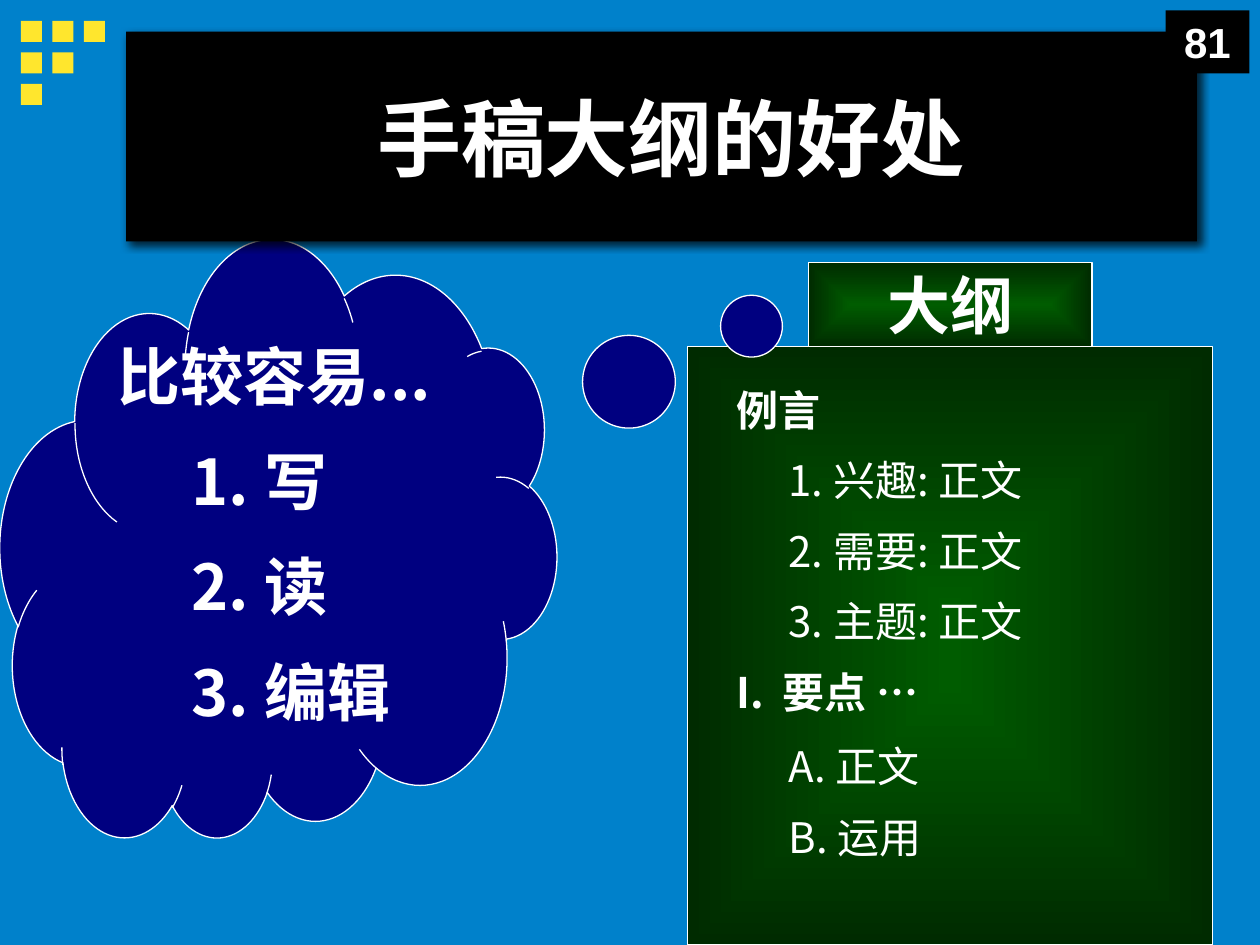
from lxml import etree
from pptx import Presentation
from pptx.dml import color
from pptx.enum import shapes, text
from pptx.oxml import ns
from pptx.util import Pt

BLUE = color.RGBColor(0x00, 0x81, 0xCB)
YELLOW = color.RGBColor(0xFF, 0xE6, 0x2D)
NAVY = color.RGBColor(0x00, 0x00, 0x80)
GREEN = color.RGBColor(0x00, 0x5C, 0x00)
DARK_GREEN = color.RGBColor(0x00, 0x2B, 0x00)
BLACK = color.RGBColor(0x00, 0x00, 0x00)
WHITE = color.RGBColor(0xFF, 0xFF, 0xFF)
CJK = "Noto Sans CJK TC"
CENTER = text.PP_ALIGN.CENTER
LEFT = text.PP_ALIGN.LEFT


def write(para, content, size=24, bold=True, font=CJK, align=CENTER, margin=0, hanging=0, after=0):
    para.alignment = align
    para.space_before = Pt(0)
    para.space_after = Pt(after)
    properties = para._p.get_or_add_pPr()
    properties.set("marL", str(Pt(margin)))
    properties.set("indent", str(-Pt(hanging)))
    etree.SubElement(properties, ns.qn("a:buNone"))
    span = para.add_run()
    span.text = content
    span.font.size = Pt(size)
    span.font.bold = bold
    span.font.color.rgb = WHITE
    span.font.name = font
    east_asian = etree.SubElement(span._r.get_or_add_rPr(), ns.qn("a:ea"))
    east_asian.set("typeface", font)


def draw(kind, left, top, width, height, fill, outlined=False):
    shape = page.shapes.add_shape(kind, Pt(left), Pt(top), Pt(width), Pt(height))
    shape.shadow.inherit = False
    if fill == GREEN:
        shape.fill.gradient()
        for stop, shade in zip(shape.fill.gradient_stops, (GREEN, DARK_GREEN)):
            stop.color.rgb = shade
        gradient = shape.element.spPr.find(ns.qn("a:gradFill"))
        gradient.remove(gradient.find(ns.qn("a:lin")))
        path = etree.SubElement(gradient, ns.qn("a:path"), {"path": "shape"})
        center = dict.fromkeys("ltrb", "50000")
        etree.SubElement(path, ns.qn("a:fillToRect"), center)
    else:
        shape.fill.solid()
        shape.fill.fore_color.rgb = fill
    if outlined:
        shape.line.color.rgb = WHITE
        shape.line.width = Pt(0.75)
    else:
        shape.line.fill.background()
    return shape


deck = Presentation()
deck.slide_width, deck.slide_height = Pt(720), Pt(540)
page = deck.slides.add_slide(deck.slide_layouts[3])
page.background.fill.solid()
page.background.fill.fore_color.rgb = BLUE
RECTANGLE = shapes.MSO_SHAPE.RECTANGLE

for row in range(3):
    for column in range(3 - row):
        draw(RECTANGLE, 12 + 18 * column, 12 + 18 * row, 12, 12, YELLOW)

draw(RECTANGLE, 393, 198, 300, 342, GREEN, outlined=True)
cloud = draw(shapes.MSO_SHAPE.CLOUD_CALLOUT, 0, 138, 318, 342, NAVY, outlined=True)
cloud.rotation = 180
cloud.adjustments[0] = -1.02
cloud.adjustments[1] = 0.43

title, benefits, outline = page.placeholders
places = (
    (title, 72, 18, 612, 120),
    (benefits, 60, 189, 260, 260),
    (outline, 413.5, 216, 264, 300),
)
for holder, left, top, width, height in places:
    holder.element.getparent().append(holder.element)
    holder.left, holder.top = Pt(left), Pt(top)
    holder.width, holder.height = Pt(width), Pt(height)
    holder.text_frame.auto_size = text.MSO_AUTO_SIZE.NONE
    holder.text_frame.word_wrap = True

title.fill.solid()
title.fill.fore_color.rgb = BLACK
title.text_frame.vertical_anchor = text.MSO_ANCHOR.MIDDLE
title.shadow.inherit = False
effects = title.element.spPr.find(ns.qn("a:effectLst"))
shadow = etree.SubElement(effects, ns.qn("a:outerShdw"), {
    "blurRad": str(Pt(5)), "dist": str(Pt(3)), "dir": "2700000", "algn": "tl", "rotWithShape": "0"})
tint = etree.SubElement(shadow, ns.qn("a:srgbClr"), {"val": str(BLACK)})
etree.SubElement(tint, ns.qn("a:alpha"), {"val": "75000"})
write(title.text_frame.paragraphs[0], " 手稿大纲的好处", size=48)

label = draw(RECTANGLE, 462, 150, 162, 48, GREEN, outlined=True)
label.text_frame.word_wrap = False
write(label.text_frame.paragraphs[0], "大纲", size=36)

number = draw(RECTANGLE, 666, 6, 48, 36, BLACK)
write(number.text_frame.paragraphs[0], "81", font="Arial")

heading = dict(size=36, align=LEFT, after=17)
numbered = dict(heading, margin=84, hanging=42)
section = dict(align=LEFT, after=11.5)
main_point = dict(section, after=13.5)
entry = dict(section, bold=False, margin=30)
lists = (
    (benefits, (
        ("比较容易...", heading),
        ("1.\t写", numbered),
        ("2.\t读", numbered),
        ("3.\t编辑", numbered),
    )),
    (outline, (
        ("例言", section),
        ("1. 兴趣: 正文", entry),
        ("2. 需要: 正文", entry),
        ("3. 主题: 正文", entry),
        ("I.  要点 …", main_point),
        ("A. 正文", entry),
        ("B. 运用", entry),
    )),
)
for holder, lines in lists:
    frame = holder.text_frame
    for index, (content, style) in enumerate(lines):
        para = frame.add_paragraph() if index else frame.paragraphs[0]
        write(para, content, **style)

deck.save("out.pptx")
